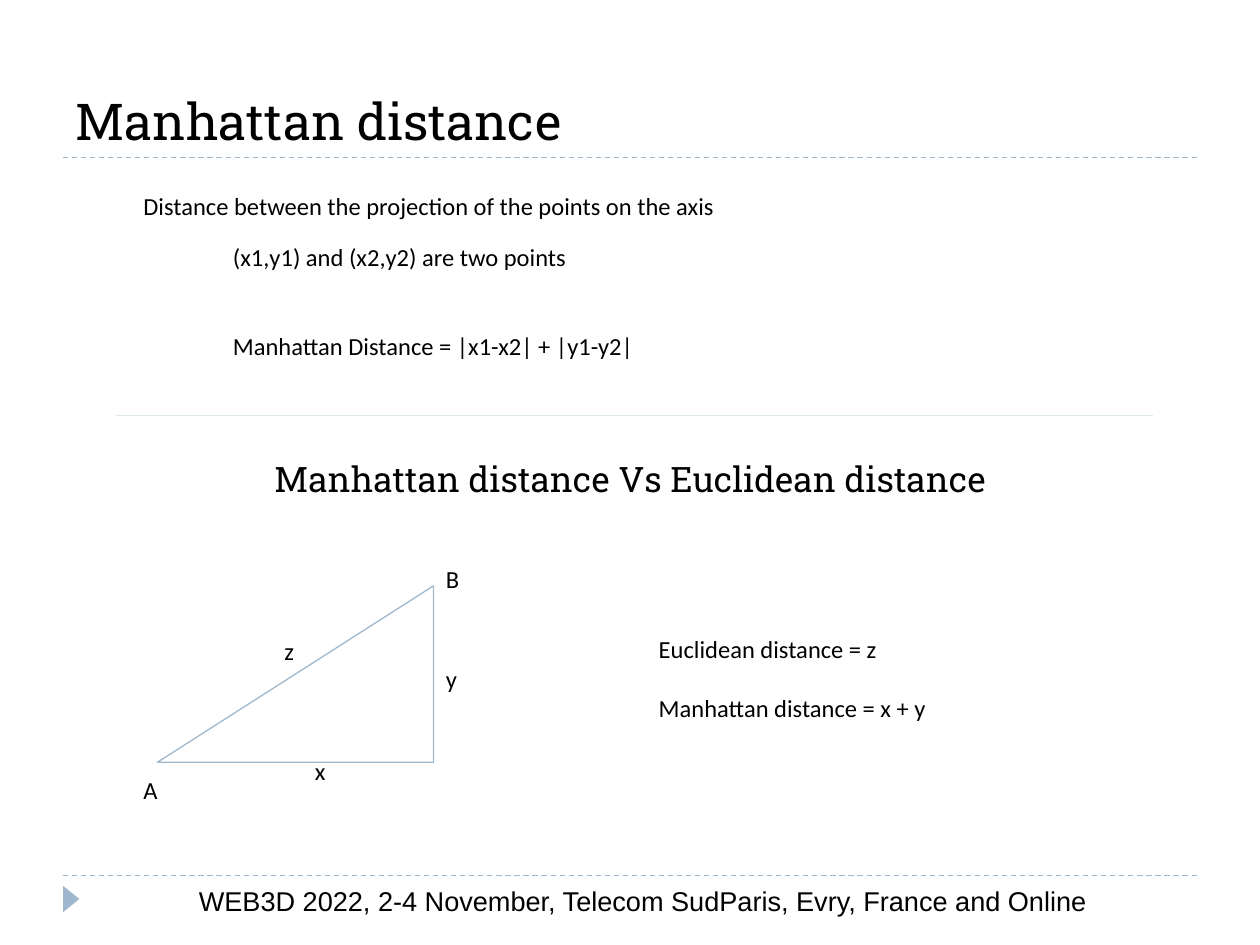
from lxml import etree
from pptx import Presentation
from pptx import util as u
from pptx.dml.color import RGBColor
from pptx.enum import dml, shapes, text
from pptx.oxml.ns import qn

HUES = {"ink": "000000", "blue": "9FB8CD", "pale": "DDE9EC", "white": "FFFFFF"}
SLAB = {"font": "Roboto Slab", "lead": 1.15, "before": 24, "after": 6}

TITLE = "Manhattan distance"
FOOT = "WEB3D 2022, 2-4 November, Telecom SudParis, Evry, France and Online"

# lines of text, box, format
NOTES = [
    (["Distance between the projection of the points on the axis"],
     (1.04, 1.42, 4.84, 0.44), {}),
    (["(x1,y1) and (x2,y2) are two points",
      "Manhattan Distance = |x1-x2| + |y1-y2|"],
     (1.75, 1.82, 4.55, 1.14), {"gap": 34}),
    (["Manhattan distance Vs Euclidean distance"],
     (1.54, 3.48, 6.93, 0.54),
     dict(SLAB, size=20, align=text.PP_ALIGN.CENTER)),
    (["Euclidean distance = z", "Manhattan distance = x + y"],
     (5.13, 4.93, 2.67, 0.91), {"gap": 17}),
]
# name of a corner or side, left, top
LABELS = [("x", 2.4, 5.9), ("y", 3.44, 5.17), ("z", 2.16, 4.95),
          ("A", 1.04, 6.05), ("B", 3.44, 4.38)]
# left, right, height on the slide, colour, dashed
RULES = [(0.5, 9.5, 6.95, "blue", True), (0.5, 9.5, 1.25, "blue", True),
         (0.92, 9.15, 3.3, "pale", False)]


def hue(name):
    return RGBColor.from_string(HUES[name])


def write(shape, lines, font="Calibri", size=14, align=text.PP_ALIGN.LEFT,
          lead=None, before=0, after=0, gap=0, pad=0.1,
          anchor=text.MSO_ANCHOR.TOP):
    """Fill a shape with paragraphs; gap is the space between them in points."""
    frame = shape.text_frame
    frame.word_wrap = True
    frame.auto_size = text.MSO_AUTO_SIZE.NONE
    frame.vertical_anchor = anchor
    frame.margin_left = frame.margin_right = u.Inches(0.1)
    frame.margin_top = frame.margin_bottom = u.Inches(pad)
    for i, line in enumerate(lines):
        para = frame.add_paragraph() if i else frame.paragraphs[0]
        para.alignment = align
        para.line_spacing = lead
        para.space_before = u.Pt(gap if i else before)
        para.space_after = u.Pt(after)
        run = para.add_run()
        run.text = line
        run.font.name = font
        run.font.size = u.Pt(size)
        run.font.color.rgb = hue("ink")


def place(box):
    return [u.Inches(n) for n in box]


def add_form(slide, kind, box, fill=None, line=None):
    form = slide.shapes.add_shape(kind, *place(box))
    form.shadow.inherit = False
    if fill:
        form.fill.solid()
        form.fill.fore_color.rgb = hue(fill)
    else:
        form.fill.background()
    if line:
        form.line.color.rgb = hue(line)
        form.line.width = u.Pt(0.75)
    else:
        form.line.fill.background()
    return form


def add_rule(slide, left, right, y, tint, dashed):
    rule = slide.shapes.add_connector(
        shapes.MSO_CONNECTOR.STRAIGHT, *place((left, y, right, y)))
    rule.line.color.rgb = hue(tint)
    rule.line.width = u.Pt(0.75)
    if dashed:
        rule.line.dash_style = dml.MSO_LINE.DASH
    etree.SubElement(rule._element.spPr, qn("a:effectLst"))


def main():
    deck = Presentation()
    deck.slide_width, deck.slide_height = u.Inches(10), u.Inches(7.5)
    slide = deck.slides.add_slide(deck.slide_layouts[5])

    for rule in RULES:
        add_rule(slide, *rule)
    kind = shapes.MSO_SHAPE
    mark = add_form(slide, kind.ISOSCELES_TRIANGLE,
                    (0.46, 7.07, 0.21, 0.13), fill="blue")
    mark.rotation = 90

    title = slide.shapes.title
    title.left, title.top, title.width, title.height = place(
        (0.5, 0.17, 9, 1.08))
    write(title, [TITLE], size=29, pad=0.05,
          anchor=text.MSO_ANCHOR.BOTTOM, **SLAB)

    corner = add_form(slide, kind.RIGHT_TRIANGLE, (1.25, 4.65, 2.19, 1.4),
                      fill="white", line="blue")
    corner._element.spPr.find(qn("a:xfrm")).set("flipH", "1")

    labels = [([name], (x, y, 0.37, 0.44), {}) for name, x, y in LABELS]
    for lines, box, style in NOTES + labels:
        write(slide.shapes.add_textbox(*place(box)), lines, **style)

    foot = add_form(slide, kind.RECTANGLE, (1.48, 6.92, 7.6, 0.46),
                    line="white")
    write(foot, [FOOT], font="Arial", size=15.5)
    deck.save("out.pptx")


if __name__ == "__main__":
    main()
